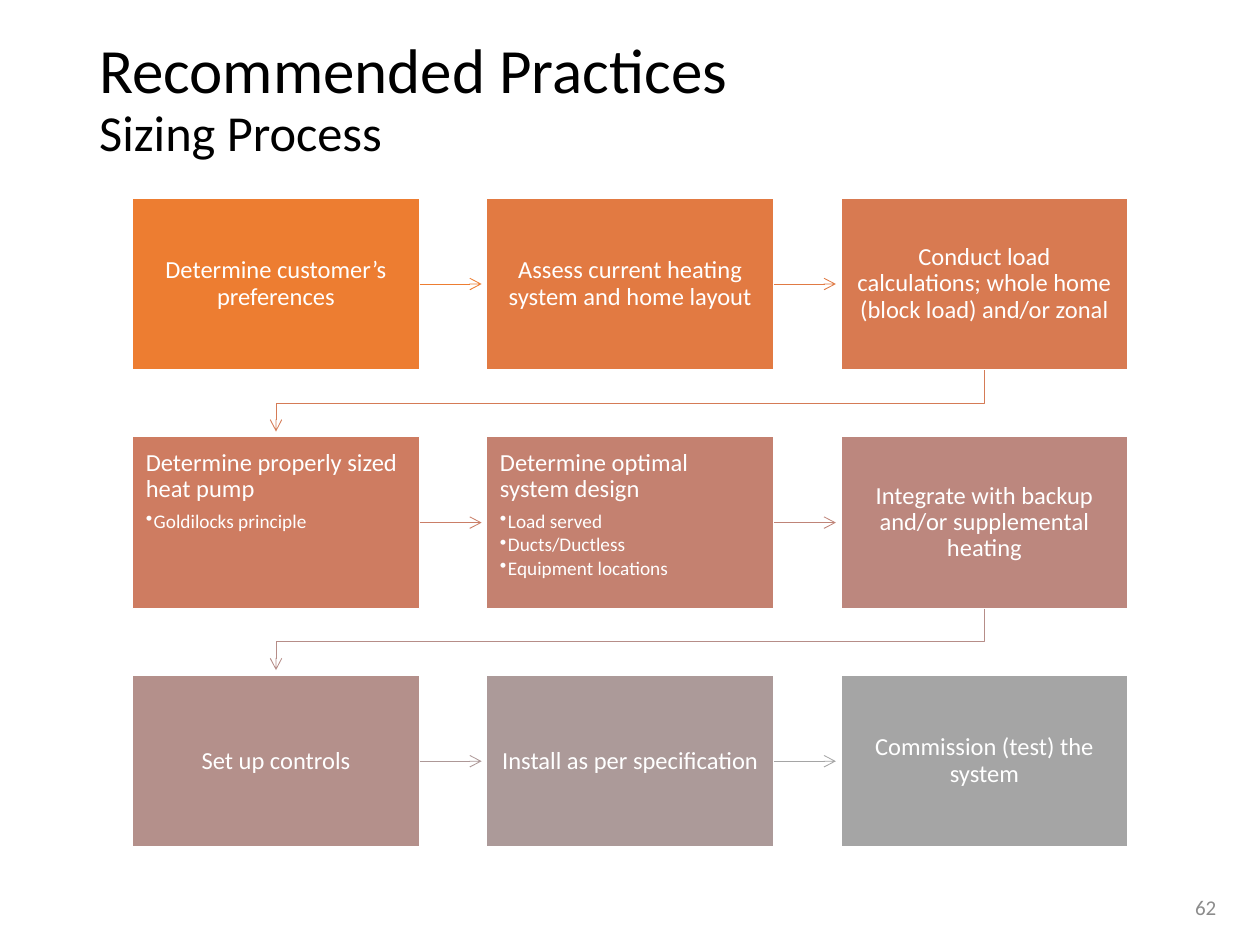
from pptx import Presentation
from pptx.dml.color import RGBColor
from pptx.enum.shapes import MSO_CONNECTOR as CONN, MSO_SHAPE as SHAPE
from pptx.enum.text import MSO_ANCHOR as ANCHOR, PP_ALIGN as ALIGN
from pptx.oxml.ns import qn
from pptx.util import Cm, Pt
from lxml.etree import SubElement

FONT = "Calibri"
WHITE = RGBColor(0xFF, 0xFF, 0xFF)
BLACK = RGBColor(0, 0, 0)
GREY = RGBColor(0x8C, 0x8C, 0x8C)

# Box grid, in cm
COLS = 3
LEFT, TOP = 2.67, 3.99
BOX_W, BOX_H = 5.79, 3.47
STEP_X, STEP_Y = 7.14, 4.81
GAP = 0.1  # between an arrowhead and the next box

# Heading, bullets, box colour, colour of the arrow to the next box
STEPS = [
    ("Determine customer’s preferences", [], "ED7D31", "ED7D31"),
    ("Assess current heating system and home layout", [], "E27A42", "E07A44"),
    ("Conduct load calculations; whole home (block load) and/or zonal", [],
     "D87A51", "D57B56"),
    ("Determine properly sized heat pump", ["Goldilocks principle"],
     "CE7C61", "CA7E67"),
    ("Determine optimal\nsystem design",
     ["Load served", "Ducts/Ductless", "Equipment locations"],
     "C48170", "BF8478"),
    ("Integrate with backup and/or supplemental heating", [],
     "BC877E", "B68D88"),
    ("Set up controls", [], "B4908B", "AD9897"),
    ("Install as per specification", [], "AC9A99", "A5A5A5"),
    ("Commission (test) the system", [], "A5A5A5", None),
]


def write(p, text, size=14, color=WHITE, align=ALIGN.LEFT, spacing=0.9,
          after=0, bullet=False):
    """Add text to a paragraph; a newline becomes a line break."""
    p.alignment, p.line_spacing, p.space_after = align, spacing, Pt(after)
    if bullet:
        p.level = 1
        pPr = p._p.get_or_add_pPr()
        pPr.set("marL", str(Cm(0.16)))
        pPr.set("indent", str(-Cm(0.16)))
        SubElement(pPr, qn("a:buChar")).set("char", "•")
    for i, line in enumerate(text.split("\n")):
        if i:
            p.add_line_break()
        r = p.add_run()
        r.text = line
        r.font.name, r.font.size = FONT, Pt(size)
        r.font.color.rgb = color


class Deck:
    def __init__(self, prs):
        self.s = prs.slides.add_slide(prs.slide_layouts[6])

    def text_box(self, x, y, w, h):
        tf = self.s.shapes.add_textbox(Cm(x), Cm(y), Cm(w), Cm(h)).text_frame
        tf.word_wrap, tf.vertical_anchor = True, ANCHOR.MIDDLE
        return tf.paragraphs[0]

    def box(self, x, y, heading, bullets, fill):
        sp = self.s.shapes.add_shape(SHAPE.RECTANGLE, Cm(x), Cm(y),
                                     Cm(BOX_W), Cm(BOX_H))
        sp.shadow.inherit = False
        sp.fill.solid()
        sp.fill.fore_color.rgb = RGBColor.from_string(fill)
        sp.line.color.rgb, sp.line.width = WHITE, Pt(1)
        tf = sp.text_frame
        tf.word_wrap = True
        tf.margin_left = tf.margin_right = Cm(0.27)
        tf.margin_top = tf.margin_bottom = Cm(0.27)
        tf.vertical_anchor = ANCHOR.TOP if bullets else ANCHOR.MIDDLE
        write(tf.paragraphs[0], heading, after=5 if bullets else 0,
              align=ALIGN.LEFT if bullets else ALIGN.CENTER)
        for bullet in bullets:
            write(tf.add_paragraph(), bullet, size=11, after=1.65, bullet=True)
        return sp

    def style_arrow(self, sp, color):
        sp.line.color.rgb, sp.line.width = RGBColor.from_string(color), Pt(0.5)
        SubElement(sp.line._get_or_add_ln(), qn("a:tailEnd")).set("type", "arrow")

    def arrow_right(self, box, next_box, color):
        y = box.top + box.height // 2
        c = self.s.shapes.add_connector(CONN.STRAIGHT, box.left + box.width, y,
                                        next_box.left - Cm(GAP), y)
        c.begin_connect(box, 3)
        self.style_arrow(c, color)
        SubElement(c._element.spPr, qn("a:effectLst"))

    def arrow_next_row(self, box, next_box, color):
        x1 = box.left + box.width // 2
        x2 = next_box.left + next_box.width // 2
        y1 = box.top + box.height
        y2 = (y1 + next_box.top) // 2
        builder = self.s.shapes.build_freeform(x1, y1)
        builder.add_line_segments(
            [(x1, y2), (x2, y2), (x2, next_box.top - Cm(GAP))], close=False)
        sp = builder.convert_to_shape()
        sp.fill.background()
        self.style_arrow(sp, color)
        sp.shadow.inherit = False


def main():
    prs = Presentation()
    prs.slide_width, prs.slide_height = Cm(25.4), Cm(19.05)
    deck = Deck(prs)

    # Title
    p = deck.text_box(1.75, 0.76, 21.9, 2.54)
    write(p, "Recommended Practices\n", size=36, color=BLACK)
    write(p, "Sizing Process", size=28.8, color=BLACK)

    # Process boxes
    boxes = []
    for i, (heading, bullets, fill, _) in enumerate(STEPS):
        row, col = divmod(i, COLS)
        boxes.append(deck.box(LEFT + col * STEP_X, TOP + row * STEP_Y,
                              heading, bullets, fill))

    # Arrows from each step to the next
    for i, (box, next_box) in enumerate(zip(boxes, boxes[1:]), 1):
        draw = deck.arrow_right if i % COLS else deck.arrow_next_row
        draw(box, next_box, STEPS[i - 1][3])

    # Slide number
    write(deck.text_box(19.05, 17.78, 5.72, 1.02), "62", size=12, color=GREY,
          align=ALIGN.RIGHT, spacing=1.0)

    prs.save("out.pptx")


if __name__ == "__main__":
    main()
